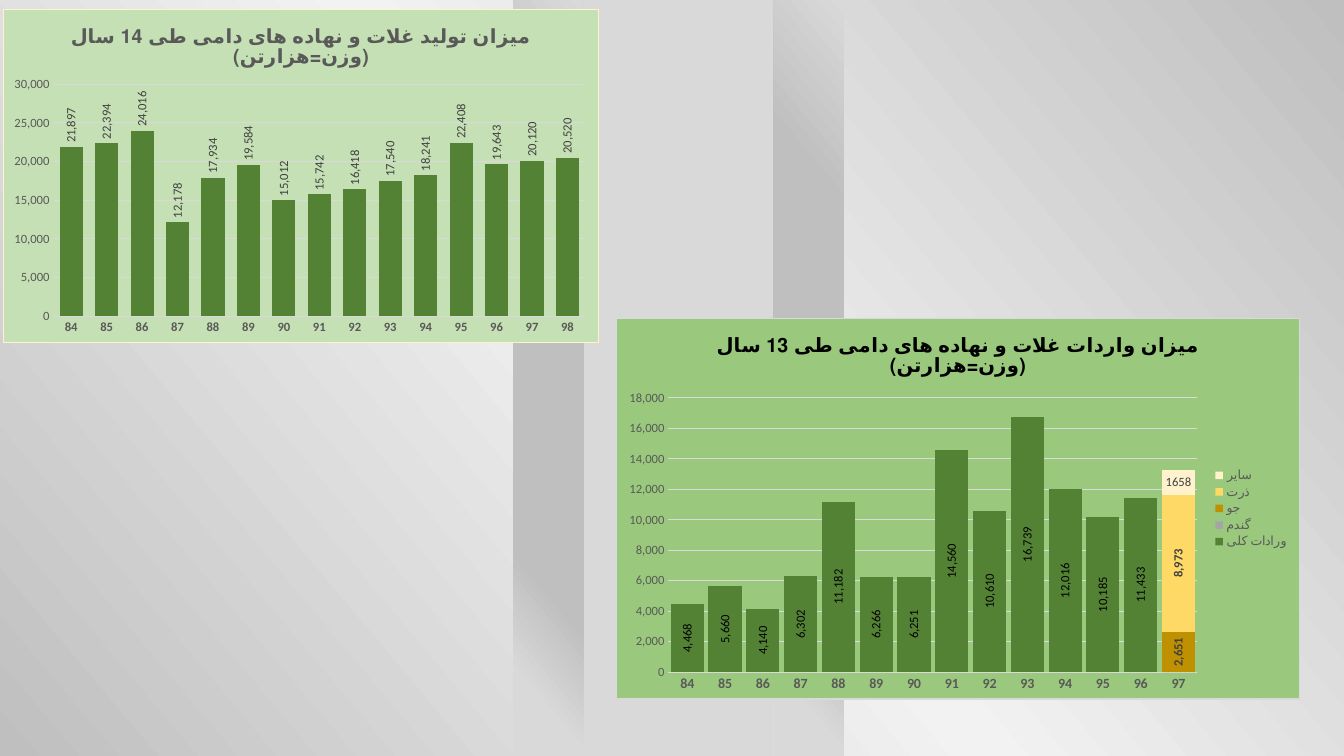
from lxml import etree
from pptx import Presentation
from pptx.chart.data import CategoryChartData
from pptx.dml.color import RGBColor
from pptx.enum.chart import XL_CHART_TYPE, XL_LABEL_POSITION, XL_LEGEND_POSITION, XL_TICK_MARK
from pptx.enum.shapes import MSO_SHAPE
from pptx.oxml import parse_xml
from pptx.oxml.ns import nsdecls, qn
from pptx.util import Inches, Pt

CLUSTERED = XL_CHART_TYPE.COLUMN_CLUSTERED
STACKED = XL_CHART_TYPE.COLUMN_STACKED
OUTSIDE = XL_LABEL_POSITION.OUTSIDE_END
CENTER = XL_LABEL_POSITION.CENTER
LEGEND_RIGHT = XL_LEGEND_POSITION.RIGHT
NO_TICK = XL_TICK_MARK.NONE
RECTANGLE = MSO_SHAPE.RECTANGLE

FONT = "Calibri"
COLORS = {
    "shade": "BFBFBF", "light": "F2F2F2", "band": "D9D9D9", "text": "595959",
    "label": "404040", "black": "000000", "green": "548235", "grey": "A5A5A5",
    "ochre": "BF9000", "yellow": "FFD966", "cream": "FFF2CC",
    "pale_green": "C5E0B4", "mid_green": "9AC97D",
}
PAGE_STOPS = [(0, "shade"), (50, "light"), (100, "shade")]
STRIP_STOPS = [(10, "band"), (25, "shade"), (50, "shade"), (75, "shade"), (100, "band")]
BANDS = [(5.67, 2, None), (7.67, 0.7, STRIP_STOPS), (5.09, 0.7, STRIP_STOPS)]  # left, width, stops


def last_year_only(value):
    return [None] * 13 + [value]


PRODUCTION = {
    "kind": CLUSTERED, "at": (0.03, 0.09, 5.91, 3.31), "plot_at": (0.084, 0.225, 0.894, 0.697),
    "title": "میزان تولید غلات و نهاده های دامی طی 14 سال (وزن=هزارتن)",
    "title_color": "text", "fill": "pale_green", "border": "cream",
    "years": range(84, 99), "year_size": 9, "top": 30000, "step": 5000,
    "gap": 53, "overlap": -27, "legend": False,
    "series": [
        {"name": "Series 1", "color": "green",
         "values": [21897, 22394, 24016, 12178, 17934, 19584, 15012, 15742, 16418,
                    17540, 18241, 22408, 19643, 20120, 20520],
         "label": {"position": OUTSIDE, "color": "label"}},
    ],
}
IMPORTS = {
    "kind": STACKED, "at": (6.11, 3.15, 6.78, 3.79), "plot_at": (0.076, 0.21, 0.775, 0.72),
    "title": "میزان واردات غلات و نهاده های دامی طی 13 سال (وزن=هزارتن)",
    "title_color": "black", "fill": "mid_green", "border": "band",
    "years": range(84, 98), "year_size": 10, "top": 18000, "step": 2000,
    "gap": 14, "overlap": 100, "legend": True,
    "series": [
        {"name": "ورادات کلی", "color": "green",
         "values": [4468, 5660, 4140, 6302, 11182, 6266, 6251, 14560, 10610,
                    16739, 12016, 10185, 11433, None],
         "label": {"color": "black"}},
        {"name": "گندم", "color": "grey", "values": last_year_only(0)},
        {"name": "جو", "color": "ochre", "values": last_year_only(2651),
         "label": {"color": "label", "bold": True}},
        {"name": "ذرت", "color": "yellow", "values": last_year_only(8973),
         "label": {"color": "label", "bold": True}},
        {"name": "سایر", "color": "cream", "values": last_year_only(1658),
         "label": {"color": "label", "upright": True, "number_format": "General"}},
    ],
}


def rgb(name):
    return RGBColor.from_string(COLORS[name])


def paint_solid(fill, color):
    fill.solid()
    fill.fore_color.rgb = rgb(color)


def paint_gradient(fill, element, stops):
    fill.gradient()
    fill.gradient_angle = 40
    stop_list = next(element.iter(qn("a:gsLst")))
    for old_stop in list(stop_list):
        stop_list.remove(old_stop)
    for percent, color in stops:
        stop = etree.SubElement(stop_list, qn("a:gs"), pos=str(percent * 1000))
        etree.SubElement(stop, qn("a:srgbClr"), val=COLORS[color])


def set_font(font, size, color, bold=False):
    font.name, font.size, font.bold = FONT, Pt(size), bold
    font.color.rgb = rgb(color)


def set_line(line, color):
    line.color.rgb = rgb(color)
    line.width = Pt(0.75)


def add_title(chart, text, color):
    frame = chart.chart_title.text_frame
    para = frame.paragraphs[0]
    para._p.get_or_add_pPr().set("rtl", "1")
    span = para.add_run()
    span.text = text
    set_font(span.font, 14, color, bold=True)
    chart.chart_title.include_in_layout = False


def place_plot(chart, place):
    """Fix the inner plot area, as fractions of the chart."""
    area = next(chart._chartSpace.iter(qn("c:plotArea")))
    for old_layout in area.findall(qn("c:layout")):
        area.remove(old_layout)
    parts = "".join(f'<c:{tag} val="{value}"/>' for tag, value in zip("xywh", place))
    area.insert(0, parse_xml(
        f'<c:layout {nsdecls("c")}><c:manualLayout><c:layoutTarget val="inner"/>'
        f'<c:xMode val="edge"/><c:yMode val="edge"/>{parts}</c:manualLayout></c:layout>'))


def paint_chart_area(chart, fill, border):
    chart._chartSpace.find(qn("c:chart")).addnext(parse_xml(
        f'<c:spPr {nsdecls("c", "a")}>'
        f'<a:solidFill><a:srgbClr val="{COLORS[fill]}"/></a:solidFill>'
        f'<a:ln w="{Pt(0.75)}"><a:solidFill><a:srgbClr val="{COLORS[border]}"/></a:solidFill></a:ln>'
        '</c:spPr>'))


def add_labels(series, color, position=CENTER, bold=False, upright=False, number_format="#,##0"):
    labels = series.data_labels
    labels.show_value = True
    labels.position = position
    labels.number_format = number_format
    labels.number_format_is_linked = False
    set_font(labels.font, 9, color, bold)
    if not upright:
        body = next(labels._element.iter(qn("a:bodyPr")))
        body.set("rot", "-5400000")
        body.set("vert", "horz")


def format_axes(chart, content):
    years, amounts = chart.category_axis, chart.value_axis
    for axis in (years, amounts):
        axis.major_tick_mark = axis.minor_tick_mark = NO_TICK
    set_font(years.tick_labels.font, content["year_size"], "text", bold=True)
    set_line(years.format.line, "band")
    set_font(amounts.tick_labels.font, 9, "text")
    amounts.tick_labels.number_format = "#,##0"
    amounts.tick_labels.number_format_is_linked = False
    amounts.minimum_scale, amounts.maximum_scale = 0, content["top"]
    amounts.major_unit = content["step"]
    amounts.format.line.fill.background()
    set_line(amounts.major_gridlines.format.line, "band")


def add_column_chart(page, content):
    data = CategoryChartData(number_format="#,##0")
    data.categories = [str(year) for year in content["years"]]
    for entry in content["series"]:
        data.add_series(entry["name"], entry["values"])
    place = [Inches(length) for length in content["at"]]
    chart = page.shapes.add_chart(content["kind"], *place, data).chart
    set_font(chart.font, 10, "black")
    paint_chart_area(chart, content["fill"], content["border"])
    add_title(chart, content["title"], content["title_color"])
    place_plot(chart, content["plot_at"])
    format_axes(chart, content)
    chart.has_legend = content["legend"]
    if content["legend"]:
        chart.legend.position = LEGEND_RIGHT
        chart.legend.include_in_layout = False
        set_font(chart.legend.font, 9, "text")
    plot = chart.plots[0]
    plot.vary_by_categories = False
    plot.gap_width, plot.overlap = content["gap"], content["overlap"]
    for series, entry in zip(plot.series, content["series"]):
        paint_solid(series.format.fill, entry["color"])
        if "label" in entry:
            add_labels(series, **entry["label"])


def main():
    deck = Presentation()
    deck.slide_width, deck.slide_height = Inches(13.33), Inches(7.5)
    page = deck.slides.add_slide(deck.slide_layouts[6])
    paint_gradient(page.background.fill, page._element, PAGE_STOPS)
    for left, width, stops in BANDS:
        band = page.shapes.add_shape(RECTANGLE, Inches(left), 0, Inches(width), deck.slide_height)
        band.shadow.inherit = False
        band.line.fill.background()
        if stops:
            paint_gradient(band.fill, band._element, stops)
        else:
            paint_solid(band.fill, "band")
    for content in (PRODUCTION, IMPORTS):
        add_column_chart(page, content)
    deck.save("out.pptx")


if __name__ == "__main__":
    main()
